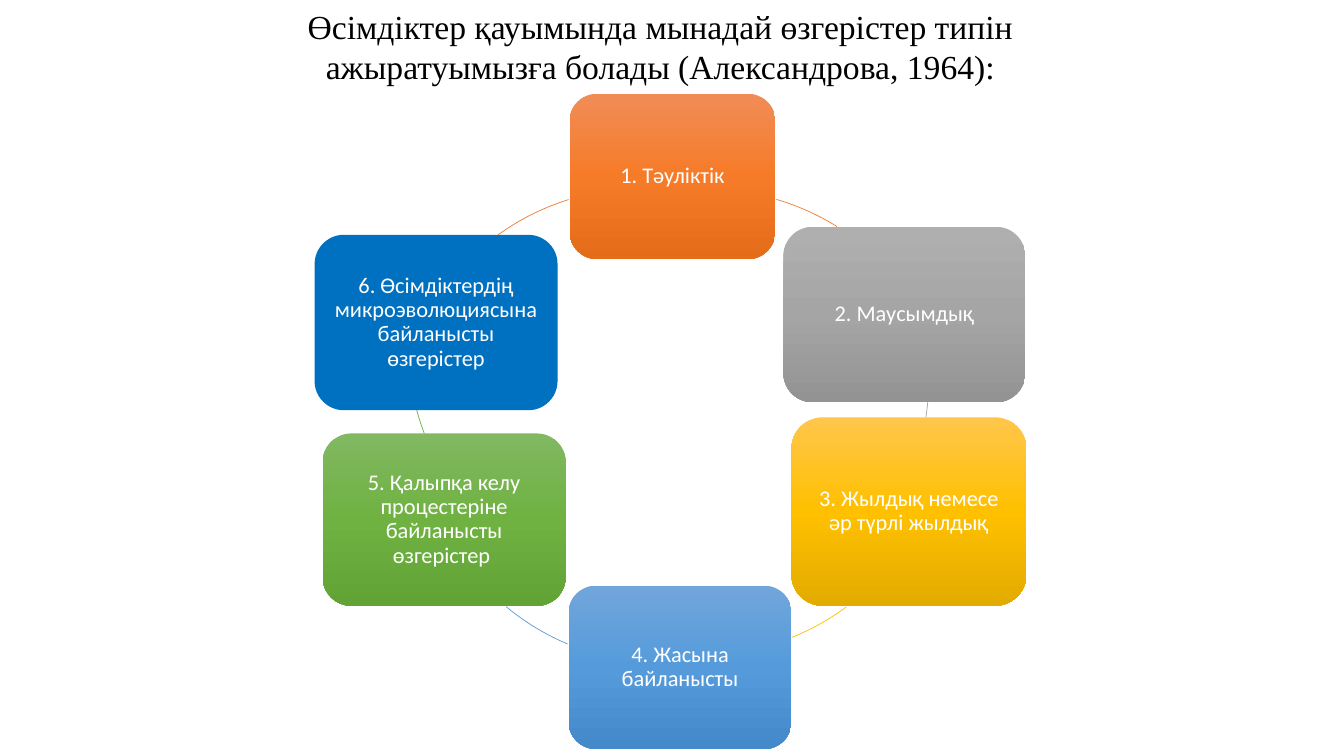
from copy import deepcopy
from dataclasses import dataclass
from math import atan2, degrees

from pptx import Presentation
from pptx.dml.color import RGBColor
from pptx.enum.shapes import MSO_SHAPE as Preset
from pptx.enum.text import MSO_ANCHOR as Anchor, MSO_AUTO_SIZE as AutoSize, PP_ALIGN as Align
from pptx.oxml.ns import qn
from pptx.util import Inches, Pt


@dataclass(frozen=True)
class Theme:
    title_font: str = "Times New Roman"
    body_font: str = "Calibri"
    title_size: int = 24
    body_size: int = 16
    title_color: str = "000000"
    body_color: str = "FFFFFF"
    orange: tuple = ("F18C57", "F67B28", "E56C19")
    gray: tuple = ("AFAFAF", "A5A5A5", "939393")
    gold: tuple = ("FFC64B", "FFC000", "E3AB00")
    blue: tuple = ("71A6DB", "559BDB", "448ACA")
    green: tuple = ("81B861", "6FB242", "62A336")
    deep_blue: tuple = ("0070C0",)
    orange_line: str = "ED7D31"
    gray_line: str = "A5A5A5"
    gold_line: str = "FFC000"
    blue_line: str = "5B9BD5"
    green_line: str = "70AD47"
    line_width: float = 0.5


THEME = Theme()
TITLE = "Өсімдіктер қауымында мынадай өзгерістер типін ажыратуымызға болады (Александрова, 1964):"
TITLE_BOX = (2.18, 0, 8.74, 0.91)
CHANGES = [
    ("1. Тәуліктік", (5.65, 0.93, 2.04, 1.64), THEME.orange),
    ("2. Маусымдық", (7.77, 2.25, 2.4, 1.74), THEME.gray),
    ("3. Жылдық немесе әр түрлі жылдық", (7.85, 4.14, 2.33, 1.87), THEME.gold),
    ("4. Жасына байланысты", (5.64, 5.81, 2.21, 1.62), THEME.blue),
    ("5. Қалыпқа келу процестеріне байланысты өзгерістер ", (3.2, 4.3, 2.41, 1.71), THEME.green),
    ("6. Өсімдіктердің микроэволюциясына байланысты өзгерістер", (3.12, 2.33, 2.41, 1.74), THEME.deep_blue),
]
CIRCLE_SIZE = 4.87
ARCS = [
    ((4.58, 1.88), (7.7, 1.98), (8.3, 2.25), THEME.orange_line),
    ((4.34, 1.35), (9.2, 3.99), (9.18, 4.14), THEME.gray_line),
    ((4.51, 1.63), (8.39, 6.02), (7.85, 6.31), THEME.gold_line),
    ((4.14, 1.71), (5.63, 6.39), (5.02, 6.02), THEME.blue_line),
    ((4.05, 1.0), (4.21, 4.3), (4.13, 4.07), THEME.green_line),
    ((3.93, 1.87), (4.94, 2.33), (5.64, 1.98), THEME.orange_line),
]


def write_text(shape, text, font, size, color, spacing):
    frame = shape.text_frame
    frame.word_wrap = True
    frame.auto_size = AutoSize.NONE
    frame.vertical_anchor = Anchor.MIDDLE
    paragraph = frame.paragraphs[0]
    paragraph.text = text
    paragraph.alignment = Align.CENTER
    paragraph.line_spacing = spacing
    paragraph.font.name = font
    paragraph.font.size = Pt(size)
    paragraph.font.color.rgb = RGBColor.from_string(color)


def fill_shape(shape, colors):
    if len(colors) == 1:
        shape.fill.solid()
        shape.fill.fore_color.rgb = RGBColor.from_string(colors[0])
        return
    shape.fill.gradient()
    shape.fill.gradient_angle = 270
    stop_list = shape._element.spPr.find(qn("a:gradFill")).find(qn("a:gsLst"))
    stop_list.append(deepcopy(stop_list[0]))
    for index, (stop, color) in enumerate(zip(shape.fill.gradient_stops, colors)):
        stop.position = index / (len(colors) - 1)
        stop.color.rgb = RGBColor.from_string(color)


def add_change(slide, text, box, colors):
    shape = slide.shapes.add_shape(Preset.ROUNDED_RECTANGLE, *map(Inches, box))
    shape.shadow.inherit = False
    shape.line.fill.background()
    fill_shape(shape, colors)
    frame = shape.text_frame
    frame.margin_left = frame.margin_right = Inches(0.07)
    frame.margin_top = frame.margin_bottom = Inches(0.07)
    write_text(shape, text, THEME.body_font, THEME.body_size, THEME.body_color, 0.9)


def add_arc(slide, corner, start, end, color):
    left, top = corner
    radius = CIRCLE_SIZE / 2
    arc = slide.shapes.add_shape(Preset.ARC, *map(Inches, (left, top, CIRCLE_SIZE, CIRCLE_SIZE)))
    arc.shadow.inherit = False
    arc.fill.background()
    arc.line.color.rgb = RGBColor.from_string(color)
    arc.line.width = Pt(THEME.line_width)
    for index, (x, y) in enumerate((start, end)):
        angle = degrees(atan2(y - top - radius, x - left - radius)) % 360
        arc.adjustments[index] = angle * 0.6


def main():
    presentation = Presentation()
    presentation.slide_width, presentation.slide_height = Inches(13.33), Inches(7.5)
    slide = presentation.slides.add_slide(presentation.slide_layouts[5])
    title = slide.shapes.title
    title.left, title.top, title.width, title.height = map(Inches, TITLE_BOX)
    write_text(title, TITLE, THEME.title_font, THEME.title_size, THEME.title_color, 1.0)
    for change, arc in zip(CHANGES, ARCS):
        add_change(slide, *change)
        add_arc(slide, *arc)
    presentation.save("out.pptx")


if __name__ == "__main__":
    main()
